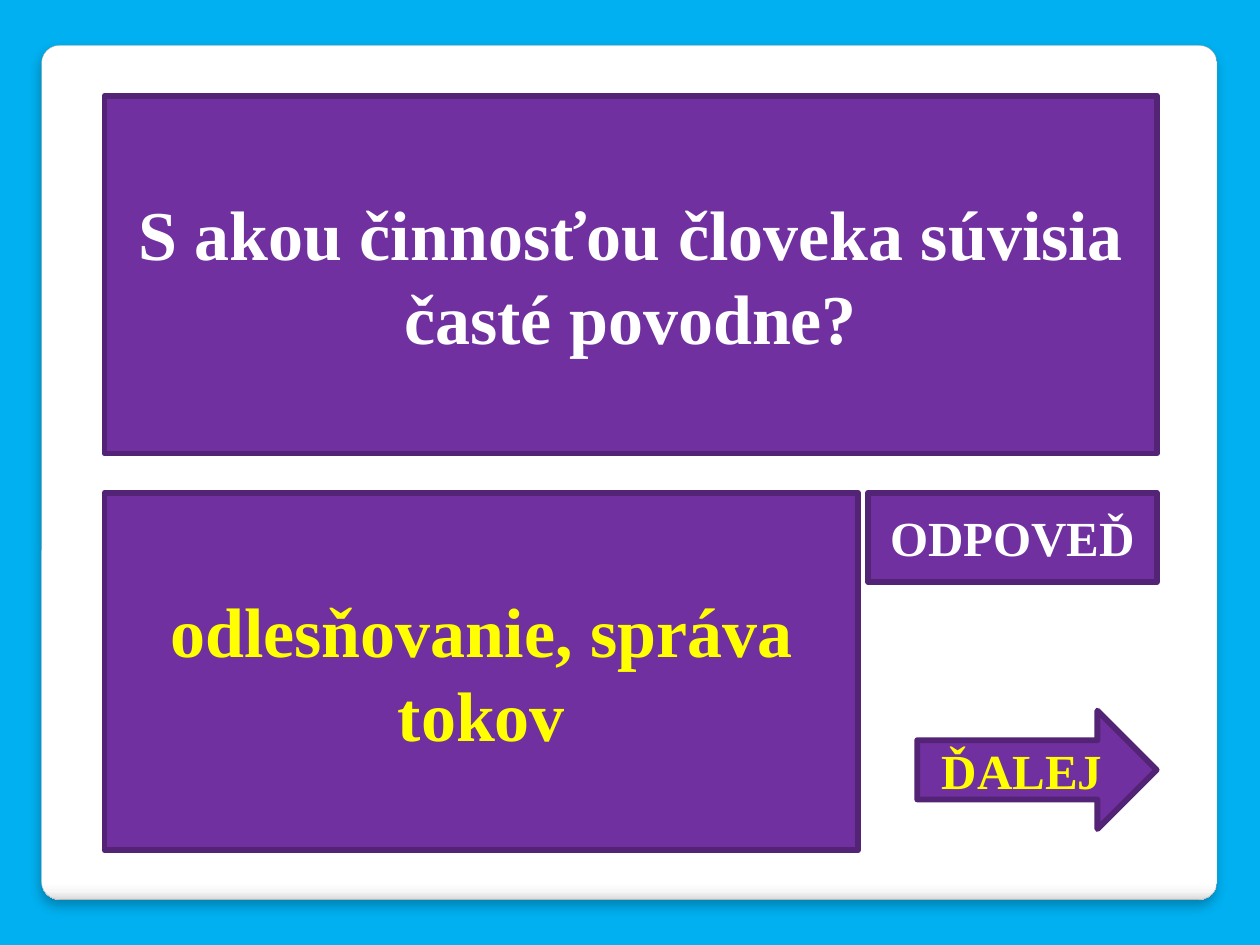
from lxml.etree import SubElement as Sub
from pptx import Presentation
from pptx.dml.color import RGBColor as Rgb
from pptx.enum.shapes import MSO_SHAPE as Kind
from pptx.enum.text import MSO_ANCHOR as Anchor, PP_ALIGN as Align
from pptx.oxml.ns import qn
from pptx.util import Emu, Pt

PX = 9144  # EMU per px, 100 px to the inch
FONT = "Times New Roman"
HEX = {
    "sky": "00B0F0", "white": "FFFFFF", "mist": "F7F7F7", "ash": "DADADA",
    "edge": "A4A4A4", "black": "000000",
    "plum": "7030A0", "dark": "532476", "yellow": "FFFF00",
}


def rgb(name):
    return Rgb.from_string(HEX[name])


def add(slide, kind, box, line, width):
    """Add an outlined shape without a shadow."""
    shape = slide.shapes.add_shape(kind, *(Emu(n * PX) for n in box))
    shape.shadow.inherit = False
    shape.line.color.rgb = rgb(line)
    shape.line.width = Pt(width)
    return shape


def write(shape, text, size=28, color="white", bold=True):
    frame = shape.text_frame
    frame.word_wrap = True
    frame.vertical_anchor = Anchor.MIDDLE
    para = frame.paragraphs[0]
    para.alignment = Align.CENTER
    run = para.add_run()
    run.text = text
    font = run.font
    font.name, font.size, font.bold = FONT, Pt(size), bold
    font.color.rgb = rgb(color)


def block(slide, box, text, kind=Kind.RECTANGLE, **style):
    """Add a purple block with centred text."""
    shape = add(slide, kind, box, "dark", 3.35)
    shape.fill.solid()
    shape.fill.fore_color.rgb = rgb("plum")
    write(shape, text, **style)


def card(slide, box):
    """Add the white rounded panel with its shaded foot and soft shadow."""
    shape = add(slide, Kind.ROUNDED_RECTANGLE, box, "edge", 0.16)
    shape.adjustments[0] = 0.021
    shape.fill.gradient()
    shape.fill.gradient_angle = 270
    props = shape._element.spPr
    stops = props.find(".//" + qn("a:gsLst"))
    for stop in list(stops):
        stops.remove(stop)
    for pos, name in ((0, "white"), (98, "white"), (99, "mist"), (100, "ash")):
        stop = Sub(stops, qn("a:gs"), pos=str(pos * 1000))
        Sub(stop, qn("a:srgbClr"), val=HEX[name])
    glow = Sub(props.find(qn("a:effectLst")), qn("a:outerShdw"),
               blurRad=str(Pt(6)), dist=str(Pt(4)), dir="5400000",
               algn="t", rotWithShape="0")
    tint = Sub(glow, qn("a:srgbClr"), val=HEX["black"])
    Sub(tint, qn("a:alpha"), val="25000")


def quiz(slide, box, ask, reply):
    """Place the question, the answer and the two buttons in the box."""
    left, top, wide, high = box
    right, tall = left + wide, 284
    low = top + high - tall
    block(slide, (left, top, wide, tall), ask, size=40)
    block(slide, (left, low, 598, tall), reply, size=40, color="yellow")
    block(slide, (right - 229, low, 229, 71), "ODPOVEĎ")
    block(slide, (right - 190, low + 173, 190, 94), "ĎALEJ",
          kind=Kind.RIGHT_ARROW, color="yellow")


def main():
    deck = Presentation()
    deck.slide_width, deck.slide_height = Emu(1000 * PX), Emu(750 * PX)
    slide = deck.slides.add_slide(deck.slide_layouts[6])
    back = slide.background.fill
    back.solid()
    back.fore_color.rgb = rgb("sky")
    card(slide, (33, 36, 933, 678))
    quiz(slide, (83, 76, 835, 599),
         "S akou činnosťou človeka súvisia časté povodne?",
         "odlesňovanie, správa tokov")
    deck.save("out.pptx")


if __name__ == "__main__":
    main()
